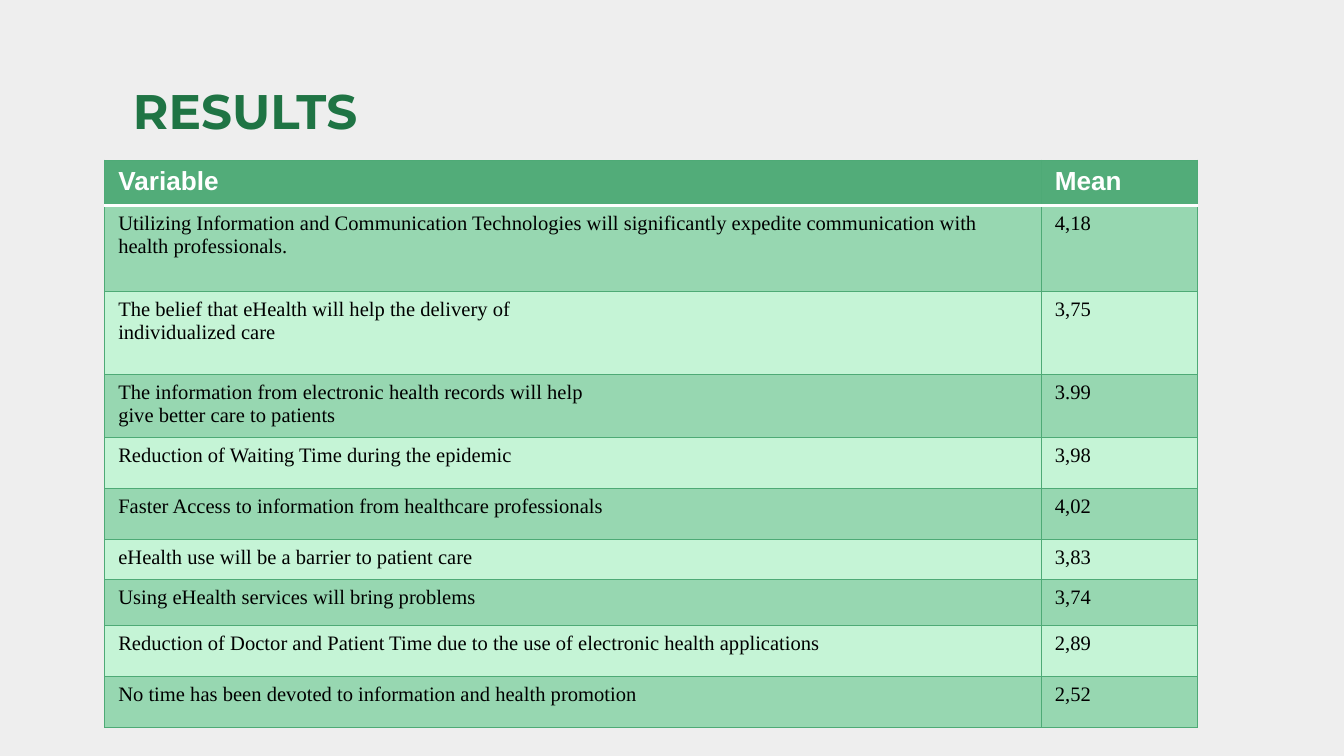
from lxml.etree import SubElement
from pptx import Presentation
from pptx.dml.color import RGBColor
from pptx.enum.text import MSO_ANCHOR
from pptx.oxml.ns import qn
from pptx.util import Inches, Pt

COLORS = {
    "background": "EEEEEE",
    "title": "1F7444",
    "header": "52AC79",
    "dark_row": "97D7B1",
    "light_row": "C5F4D6",
    "border": "4EAA76",
    "white": "FFFFFF",
    "black": "000000",
}
FORMATS = {
    "title": {"name": "Montserrat", "size": Pt(26), "bold": True},
    "header": {"name": "Arial", "size": Pt(14), "bold": True},
    "body": {"name": "Times New Roman", "size": Pt(11), "bold": False},
}
WIDTH = Inches(10)
HEIGHT = WIDTH * 9 // 16
COLUMN_SHARES = (6.96, 1.16)
ROW_SHARES = (0.32, 0.64, 0.62, 0.45, 0.38, 0.38, 0.3, 0.34, 0.38, 0.38)
RESULTS = [
    ("Variable", "Mean"),
    ("Utilizing Information and Communication Technologies will significantly "
     "expedite communication with health professionals.", "4,18"),
    ("The belief that eHealth will help the delivery of\nindividualized care", "3,75"),
    ("The information from electronic health records will help\n"
     "give better care to patients", "3.99"),
    ("Reduction of Waiting Time during the epidemic", "3,98"),
    ("Faster Access to information from healthcare professionals", "4,02"),
    ("eHealth use will be a barrier to patient care", "3,83"),
    ("Using eHealth services will bring problems", "3,74"),
    ("Reduction of Doctor and Patient Time due to the use of electronic "
     "health applications", "2,89"),
    ("No time has been devoted to information and health promotion", "2,52"),
]


def rgb(name):
    return RGBColor.from_string(COLORS[name])


def percent_box(left, top, width, height):
    """Turn percentages of the slide into a box in slide units."""
    return (int(left * WIDTH / 100), int(top * HEIGHT / 100),
            int(width * WIDTH / 100), int(height * HEIGHT / 100))


def write_text(text_frame, text, style, color):
    text_frame.text = text
    for paragraph in text_frame.paragraphs:
        for run in paragraph.runs:
            for attribute, value in FORMATS[style].items():
                setattr(run.font, attribute, value)
            run.font.color.rgb = rgb(color)


def set_border(cell, side, color, points):
    properties = cell._tc.get_or_add_tcPr()
    line = SubElement(properties, qn(f"a:ln{side}"), w=str(Pt(points)))
    fill = SubElement(line, qn("a:solidFill"))
    SubElement(fill, qn("a:srgbClr"), val=COLORS[color])


def add_title(slide, box, text):
    text_frame = slide.shapes.add_textbox(*box).text_frame
    frame_format = {"word_wrap": True, "vertical_anchor": MSO_ANCHOR.MIDDLE}
    for side in ("left", "right", "top", "bottom"):
        frame_format[f"margin_{side}"] = Inches(0.1)
    for attribute, value in frame_format.items():
        setattr(text_frame, attribute, value)
    write_text(text_frame, text, "title", "title")


def format_cell(cell, text, row):
    is_header = row == 0
    for side in "LRTB":
        under_header = (row, side) in ((0, "B"), (1, "T"))
        set_border(cell, side, *(("white", 2) if under_header else ("border", 0.75)))
    cell.fill.solid()
    band = "dark_row" if row % 2 else "light_row"
    cell.fill.fore_color.rgb = rgb("header" if is_header else band)
    style, color = ("header", "white") if is_header else ("body", "black")
    write_text(cell.text_frame, text, style, color)


def add_results_table(slide, box, results):
    table = slide.shapes.add_table(len(results), len(results[0]), *box).table
    for column, share in zip(table.columns, COLUMN_SHARES):
        column.width = int(box[2] * share / sum(COLUMN_SHARES))
    for row, share in zip(table.rows, ROW_SHARES):
        row.height = int(box[3] * share / sum(ROW_SHARES))
    for row, texts in enumerate(results):
        for column, text in enumerate(texts):
            format_cell(table.cell(row, column), text, row)


def main():
    presentation = Presentation()
    presentation.slide_width, presentation.slide_height = WIDTH, HEIGHT
    slide = presentation.slides.add_slide(presentation.slide_layouts[6])
    slide.background.fill.solid()
    slide.background.fill.fore_color.rgb = rgb("background")
    add_title(slide, percent_box(8.9, 8.95, 82.1, 11.2), "RESULTS")
    add_results_table(slide, percent_box(7.8, 21.2, 81.3, 74.5), RESULTS)
    presentation.save("out.pptx")


if __name__ == "__main__":
    main()
